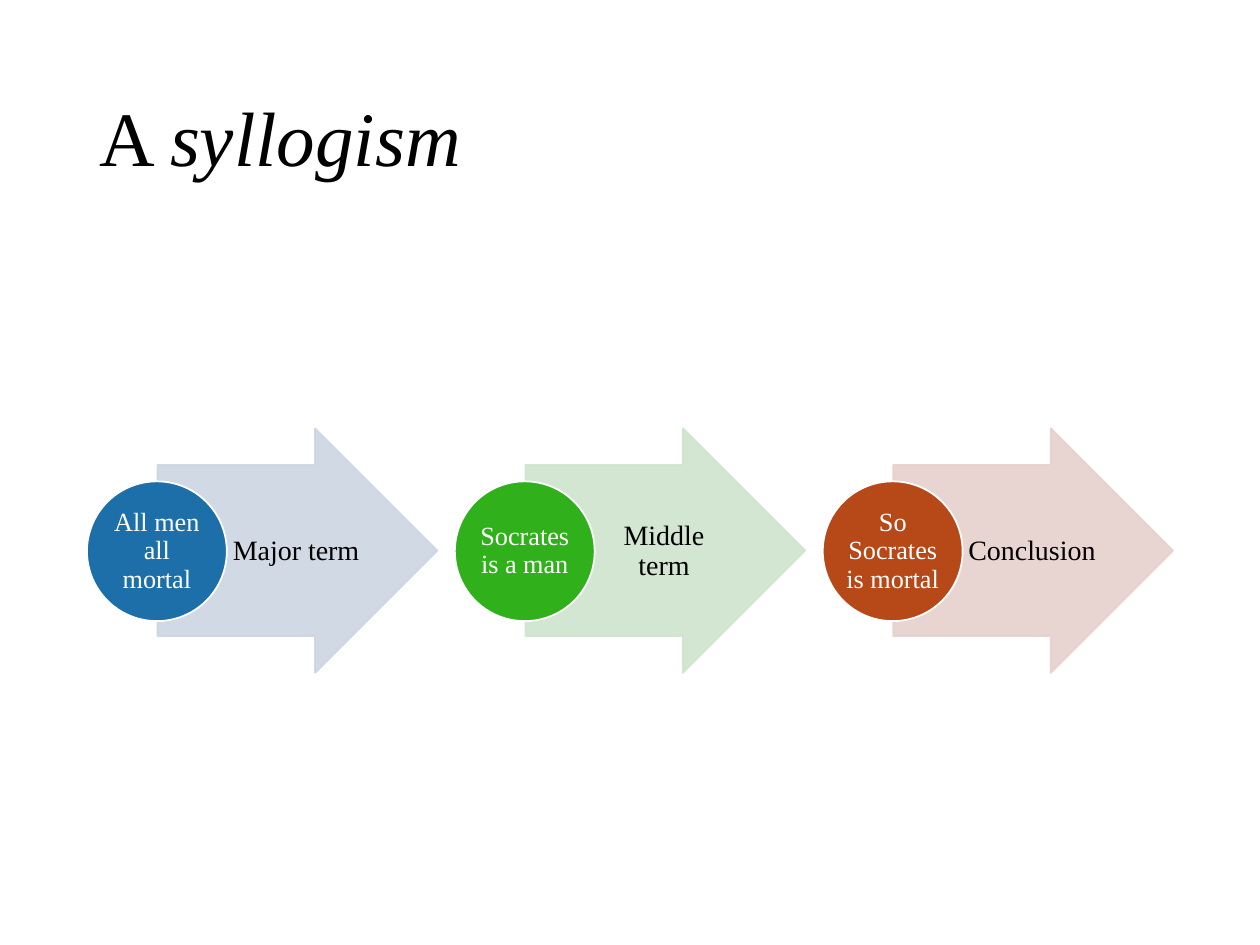
from pptx import Presentation
from pptx.dml.color import RGBColor
from pptx.enum.shapes import MSO_SHAPE
from pptx.enum.text import MSO_ANCHOR, PP_ALIGN
from pptx.oxml.ns import qn
from pptx.util import Inches, Pt
from lxml import etree

ARROW, CIRCLE = MSO_SHAPE.RIGHT_ARROW, MSO_SHAPE.OVAL
MIDDLE = MSO_ANCHOR.MIDDLE
LEFT, CENTER = PP_ALIGN.LEFT, PP_ALIGN.CENTER

FONT = "Times New Roman"
COLORS = {
    "black": "000000", "white": "FFFFFF",
    "blue": "1D6FA9", "pale blue": "CDD5E2",
    "green": "30B01B", "pale green": "CFE4CD",
    "rust": "B74919", "pale rust": "E6D0CC",
}
STEPS = [
    ("All men all mortal", "Major term", "blue"),
    ("Socrates is a man", "Middle term", "green"),
    ("So Socrates is mortal", "Conclusion", "rust"),
]
STEP_LEFT, STEP_TOP, STEP_PITCH = 0.69, 3.4, 2.92
TITLE_INSETS = (0.1, 0.05, 0.1, 0.05)
LABEL_INSETS = (0.04, 0.01, 0.02, 0.01)
PREMISE_INSETS = (0.01, 0.01, 0.01, 0.01)


def rgb(name):
    return RGBColor.from_string(COLORS[name])


def set_values(target, values):
    for name, value in values.items():
        setattr(target, name, value)


def add_text(shapes, box, runs, size, color, insets, align=CENTER):
    """Add a text box; runs are (text, italic) pairs."""
    frame = shapes.add_textbox(*map(Inches, box)).text_frame
    left, top, right, bottom = map(Inches, insets)
    set_values(frame, {
        "word_wrap": True, "vertical_anchor": MIDDLE,
        "margin_left": left, "margin_top": top,
        "margin_right": right, "margin_bottom": bottom,
    })
    paragraph = frame.paragraphs[0]
    set_values(paragraph, {"alignment": align, "line_spacing": 0.9})
    for text, italic in runs:
        run = paragraph.add_run()
        run.text = text
        set_values(run.font, {"name": FONT, "size": Pt(size), "italic": italic})
        run.font.color.rgb = rgb(color)


def add_filled_shape(shapes, kind, box, fill, line):
    shape = shapes.add_shape(kind, *map(Inches, box))
    shape.shadow.inherit = False
    shape.fill.solid()
    shape.fill.fore_color.rgb = rgb(fill)
    shape.line.color.rgb = rgb(line)
    shape.line.width = Pt(1)
    return shape


def set_opacity(shape, percent):
    for color in shape._element.spPr.iter(qn("a:srgbClr")):
        etree.SubElement(color, qn("a:alpha")).set("val", str(percent * 1000))


def add_step(slide, left, top, premise, label, color):
    """Draw one arrow with its premise circle, from the step's top left corner."""
    shapes = slide.shapes.add_group_shape().shapes
    pale = f"pale {color}"
    arrow = add_filled_shape(shapes, ARROW, (left + 0.56, top, 2.22, 1.94), pale, pale)
    arrow.adjustments[0] = 0.7
    arrow.adjustments[1] = 0.5
    set_opacity(arrow, 90)
    add_text(shapes, (left + 1.11, top + 0.3, 1.08, 1.36),
             [(label, False)], 16, "black", LABEL_INSETS)
    add_filled_shape(shapes, CIRCLE, (left, top + 0.42, 1.11, 1.11), color, "white")
    add_text(shapes, (left + 0.16, top + 0.58, 0.79, 0.79),
             [(premise, False)], 15, "white", PREMISE_INSETS)


def add_title(slide, box):
    add_text(slide.shapes, box, [("A ", False), ("syllogism", True)],
             44, "black", TITLE_INSETS, LEFT)


def main():
    presentation = Presentation()
    presentation.slide_width = Inches(10)
    presentation.slide_height = Inches(7.5)
    slide = presentation.slides.add_slide(presentation.slide_layouts[6])
    add_title(slide, (0.69, 0.4, 8.62, 1.45))
    for index, step in enumerate(STEPS):
        add_step(slide, STEP_LEFT + index * STEP_PITCH, STEP_TOP, *step)
    presentation.save("out.pptx")


if __name__ == "__main__":
    main()
